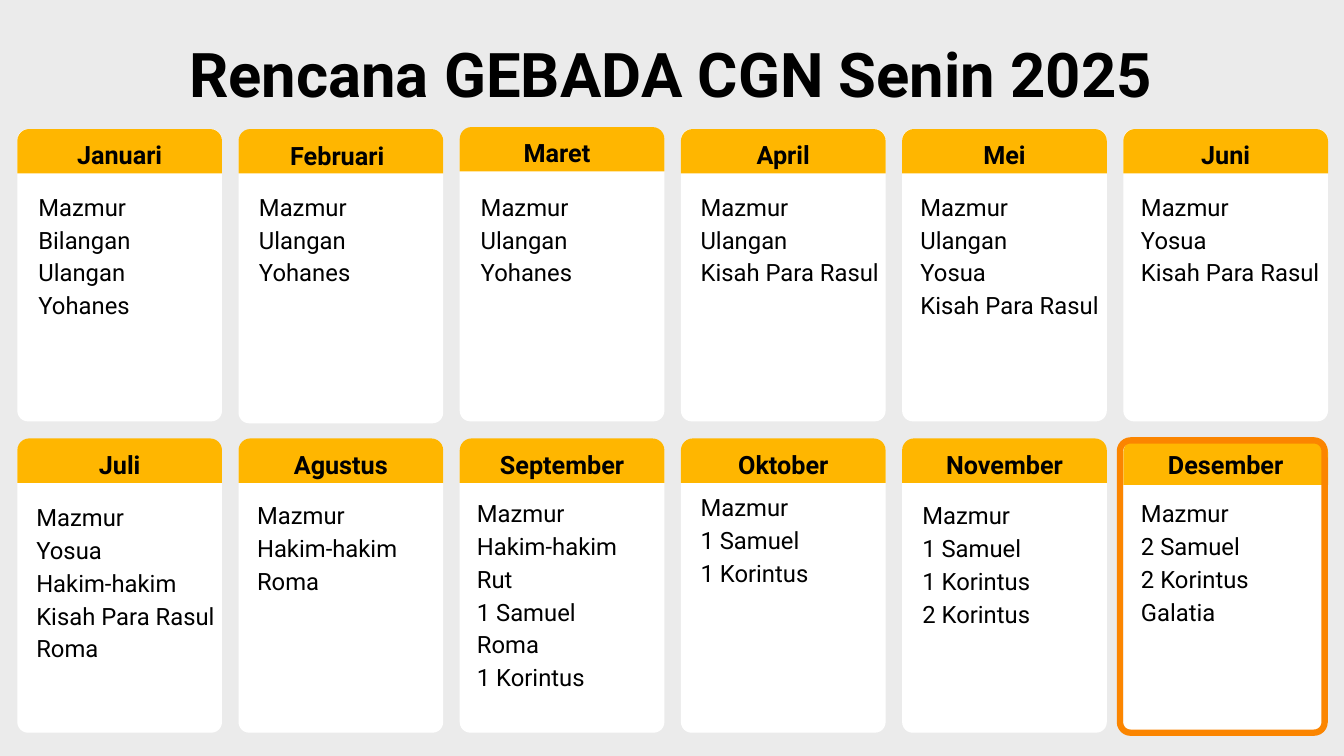
from dataclasses import dataclass
from pptx import Presentation
from pptx.dml.color import RGBColor
from pptx.enum import shapes, text
from pptx.util import Pt

BLACK = RGBColor(0, 0, 0)
WHITE = RGBColor(255, 255, 255)
GREY = RGBColor(0xEB, 0xEB, 0xEB)
GOLD = RGBColor(0xFF, 0xB6, 0x00)
AMBER = RGBColor(0xFB, 0x85, 0x00)
FONT = "Roboto"
KIND = shapes.MSO_SHAPE
WIDE, HIGH = 146.2, 208.8
LEFT, STEP = 12.4, 158
TOPS = 92.2, 314.6


@dataclass
class Month:
    name: str
    books: str
    list_x: float
    list_y: float
    band_y: float = 0
    label_x: float = 0
    label_y: float = 7.2
    card_y: float = 0
    framed: bool = False


YEAR = [
    Month("Januari", "Mazmur, Bilangan, Ulangan, Yohanes", 0.6, 45.3),
    Month("Februari", "Mazmur, Ulangan, Yohanes", 0.2, 45.3,
          label_x=-2.6, label_y=7.9, card_y=1.4),
    Month("Maret", "Mazmur, Ulangan, Yohanes", 0.6, 45.3,
          band_y=-1.4, label_x=-3.6, label_y=5.8),
    Month("April", "Mazmur, Ulangan, Kisah Para Rasul", -0.4, 45.3),
    Month("Mei", "Mazmur, Ulangan, Yosua, Kisah Para Rasul", -1.4, 45.3),
    Month("Juni", "Mazmur, Yosua, Kisah Para Rasul", -1.8, 45.3),
    Month("Juli", "Mazmur, Yosua, Hakim-hakim, Kisah Para Rasul, Roma",
          -0.9, 44.7, -1.4, label_y=6.5),
    Month("Agustus", "Mazmur, Hakim-hakim, Roma", -1.2, 43.2, -1.4, label_y=6.5),
    Month("September", "Mazmur, Hakim-hakim, Rut, 1 Samuel, Roma, 1 Korintus",
          -2.2, 41.8, -1.4, label_y=6.5),
    Month("Oktober", "Mazmur, 1 Samuel, 1 Korintus", -0.4, 37.5, -1.4, label_y=6.5),
    Month("November", "Mazmur, 1 Samuel, 1 Korintus, 2 Korintus",
          0, 43.2, -1.4, label_y=6.5),
    Month("Desember", "Mazmur, 2 Samuel, 2 Korintus, Galatia",
          -1.8, 41.8, label_y=6.5, framed=True),
]


def place(shape, x, y, w, h):
    shape.left, shape.top, shape.width, shape.height = Pt(x), Pt(y), Pt(w), Pt(h)


def block(slide, kind, box, curve, fill=None, line=None):
    shape = slide.shapes.add_shape(kind, *map(Pt, box))
    shape.shadow.inherit = False
    shape.adjustments[0] = curve
    if fill is None:
        shape.fill.background()
    else:
        shape.fill.solid()
        shape.fill.fore_color.rgb = fill
    if line is None:
        shape.line.fill.background()
    else:
        shape.line.color.rgb = line
        shape.line.width = Pt(4.5)


def write(shape, lines, size, bold=False, inset=0, after=0):
    frame = shape.text_frame
    frame.word_wrap = True
    frame.auto_size = text.MSO_AUTO_SIZE.SHAPE_TO_FIT_TEXT
    frame.vertical_anchor = text.MSO_ANCHOR.TOP
    frame.margin_left = Pt(inset)
    frame.margin_right = frame.margin_top = frame.margin_bottom = 0
    frame.text = "\n".join(lines)
    for para in frame.paragraphs:
        para.alignment = text.PP_ALIGN.CENTER if bold else text.PP_ALIGN.LEFT
        para.space_after = Pt(after)
        para.font.name = FONT
        para.font.size = Pt(size)
        para.font.bold = bold
        para.font.color.rgb = BLACK


def label(slide, box, lines, size, **style):
    write(slide.shapes.add_textbox(*map(Pt, box)), lines, size, **style)


def heading(slide, box):
    title = slide.shapes.title
    place(title, *box)
    write(title, ["Rencana GEBADA CGN Senin 2025"], 44, bold=True)


def card(slide, x, y, w, h, month):
    block(slide, KIND.ROUNDED_RECTANGLE, (x, y + month.card_y, w, h), 0.052, WHITE)
    block(slide, KIND.ROUND_2_SAME_RECTANGLE, (x, y + month.band_y, w, 31.7), 0.267, GOLD)
    label(slide, (x + month.label_x, y + month.label_y, w, 21.6),
          [month.name], 18, bold=True)
    books = month.books.split(", ")
    label(slide, (x + month.list_x, y + month.list_y, w - 0.8, 23.6 * len(books) - 3),
          books, 17, inset=14.4, after=3)
    if month.framed:
        block(slide, KIND.ROUNDED_RECTANGLE, (x - 2.4, y, w, h), 0.052, line=AMBER)


def main():
    deck = Presentation()
    deck.slide_width, deck.slide_height = Pt(960), Pt(540)
    slide = deck.slides.add_slide(deck.slide_layouts[5])
    slide.background.fill.solid()
    slide.background.fill.fore_color.rgb = GREY
    heading(slide, (18, 26, 923, 53.3))
    for spot, month in enumerate(YEAR):
        row, col = divmod(spot, 6)
        card(slide, LEFT + col * STEP, TOPS[row], WIDE, HIGH, month)
    deck.save("out.pptx")


if __name__ == "__main__":
    main()
